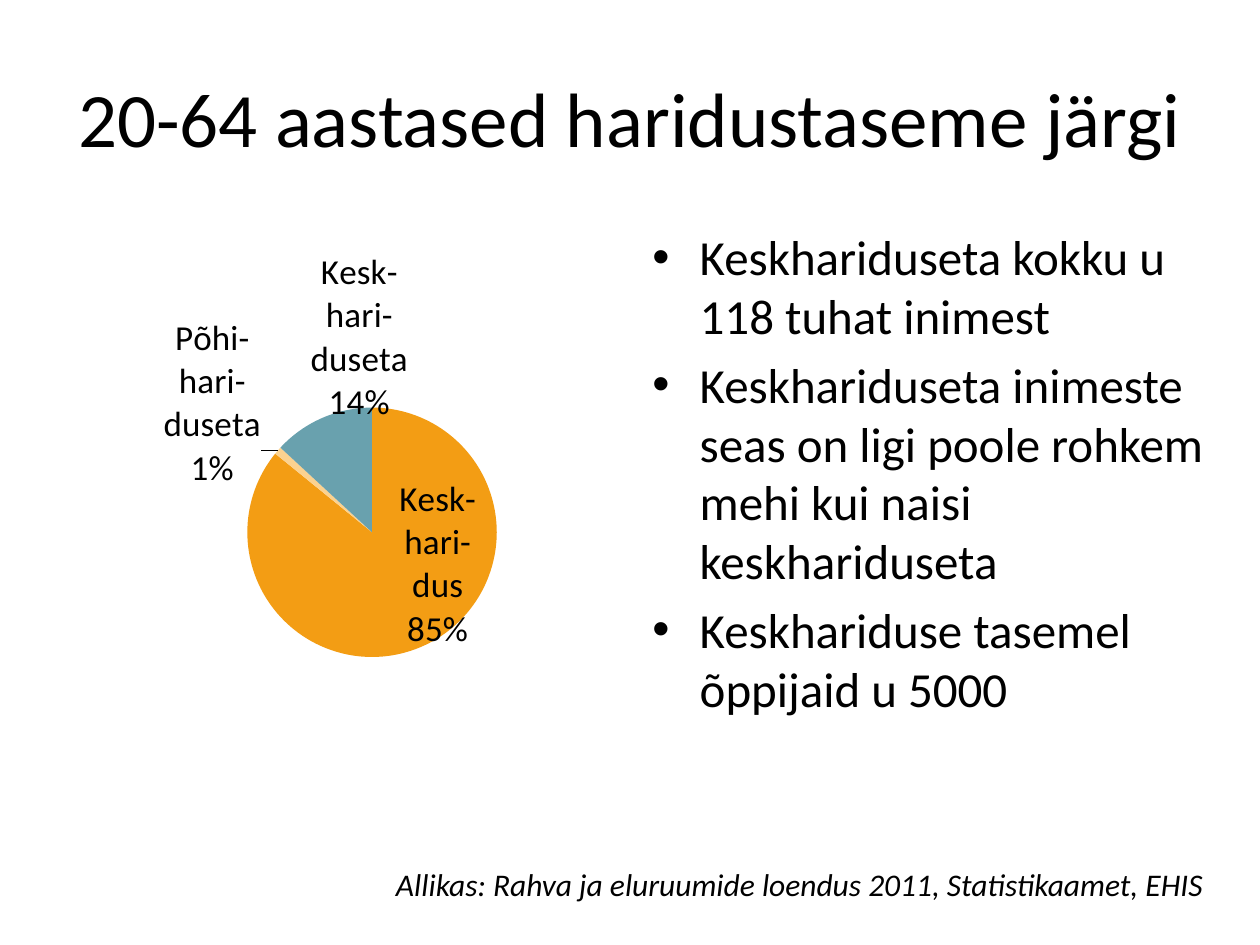
from dataclasses import dataclass

from lxml.etree import SubElement
from pptx import Presentation
from pptx.chart.data import CategoryChartData
from pptx.dml.color import RGBColor
from pptx.enum.chart import XL_CHART_TYPE, XL_LABEL_POSITION
from pptx.enum.text import MSO_ANCHOR, PP_ALIGN
from pptx.oxml import parse_xml
from pptx.oxml.ns import nsdecls, qn
from pptx.util import Pt

FONT = "Calibri"
INK = "000000"


@dataclass
class Slice:
    name: str
    value: float
    color: str
    label: str
    share: str
    place: XL_LABEL_POSITION
    shift: tuple[float, float]


SLICES = [
    Slice("Keskharidus", 85, "F39D14", "Kesk-hari-dus", "85%",
          XL_LABEL_POSITION.CENTER, (0.07, -0.04)),
    Slice("Põhihariduseta", 1, "FBD290", "Põhi-hari-duseta", "1%",
          XL_LABEL_POSITION.OUTSIDE_END, (-0.02, 0.07)),
    Slice("Keskhariduseta", 13, "69A1AE", "Kesk-hari-duseta", "14%",
          XL_LABEL_POSITION.OUTSIDE_END, (0.16, 0.02)),
]
POINTS = [
    "Keskhariduseta kokku u 118 tuhat inimest",
    "Keskhariduseta inimeste seas on ligi poole rohkem mehi kui naisi "
    "keskhariduseta",
    "Keskhariduse tasemel õppijaid u 5000",
]


def paint(color: str) -> RGBColor:
    return RGBColor.from_string(color)


def style(font, size: float, italic: bool = False) -> None:
    font.name = FONT
    font.size = Pt(size)
    font.italic = italic
    font.color.rgb = paint(INK)


def add_text(slide, box: tuple, lines: list[str], size: float,
             align=PP_ALIGN.LEFT, anchor=MSO_ANCHOR.TOP,
             italic: bool = False, bullet: bool = False) -> None:
    frame = slide.shapes.add_textbox(*map(Pt, box)).text_frame
    frame.word_wrap = True
    frame.vertical_anchor = anchor
    for i, line in enumerate(lines):
        para = frame.paragraphs[0] if i == 0 else frame.add_paragraph()
        para.text = line
        para.alignment = align
        if i:
            para.space_before = Pt(size * 0.2)
        if bullet:
            props = para._p.get_or_add_pPr()
            props.set("marL", str(Pt(27)))
            props.set("indent", str(Pt(-27)))
            SubElement(props, qn("a:buFont")).set("typeface", "Arial")
            SubElement(props, qn("a:buChar")).set("char", "•")
        style(para.font, size, italic)


def layout(x: float, y: float, size: tuple = ()):
    """Manual layout; with a size it places the plot, else shifts a label."""
    modes = ('<c:layoutTarget val="inner"/><c:xMode val="edge"/>'
             '<c:yMode val="edge"/>') if size else ""
    sides = "".join(f'<c:{k} val="{v}"/>' for k, v in zip("wh", size))
    return parse_xml(
        f'<c:layout {nsdecls("c")}><c:manualLayout>{modes}<c:x val="{x}"/>'
        f'<c:y val="{y}"/>{sides}</c:manualLayout></c:layout>')


def add_pie(slide, box: tuple, parts: list[Slice]) -> None:
    data = CategoryChartData()
    data.categories = [part.name for part in parts]
    data.add_series("Series 1", [part.value for part in parts])
    chart = slide.shapes.add_chart(
        XL_CHART_TYPE.PIE, *map(Pt, box), data).chart
    chart.has_legend = False
    chart.has_title = False
    style(chart.font, 20)
    pie = chart.plots[0]
    pie.vary_by_categories = True

    # Plot area
    area = chart._chartSpace.chart.plotArea
    for old in area.findall(qn("c:layout")):
        area.remove(old)
    area.insert(0, layout(0.33, 0.3, (0.45, 0.4)))

    # Slices and their labels
    for i, part in enumerate(parts):
        point = pie.series[0].points[i]
        point.format.fill.solid()
        point.format.fill.fore_color.rgb = paint(part.color)
        label = point.data_label
        label.text_frame.text = f"{part.label}\n{part.share}"
        for para in label.text_frame.paragraphs:
            style(para.font, 20)
            for run in para.runs:
                style(run.font, 20)
        label.position = part.place
        node = label._dLbl
        node.insert(1, layout(*part.shift))


def main() -> None:
    deck = Presentation()
    deck.slide_width, deck.slide_height = Pt(720), Pt(540)
    slide = deck.slides.add_slide(deck.slide_layouts[6])

    # Title
    add_text(slide, (36, 21.6, 648, 90), ["20-64 aastased haridustaseme järgi"],
             44, PP_ALIGN.CENTER, MSO_ANCHOR.MIDDLE)
    # Chart and key points
    add_pie(slide, (36, 126, 318.24, 356.4), SLICES)
    add_text(slide, (365.76, 126, 354.24, 356.4), POINTS, 28, bullet=True)
    # Source line
    add_text(slide, (65.52, 491.04, 629.28, 28.8),
             ["Allikas: Rahva ja eluruumide loendus 2011, Statistikaamet, EHIS"],
             18, PP_ALIGN.RIGHT, italic=True)
    deck.save("out.pptx")


if __name__ == "__main__":
    main()
